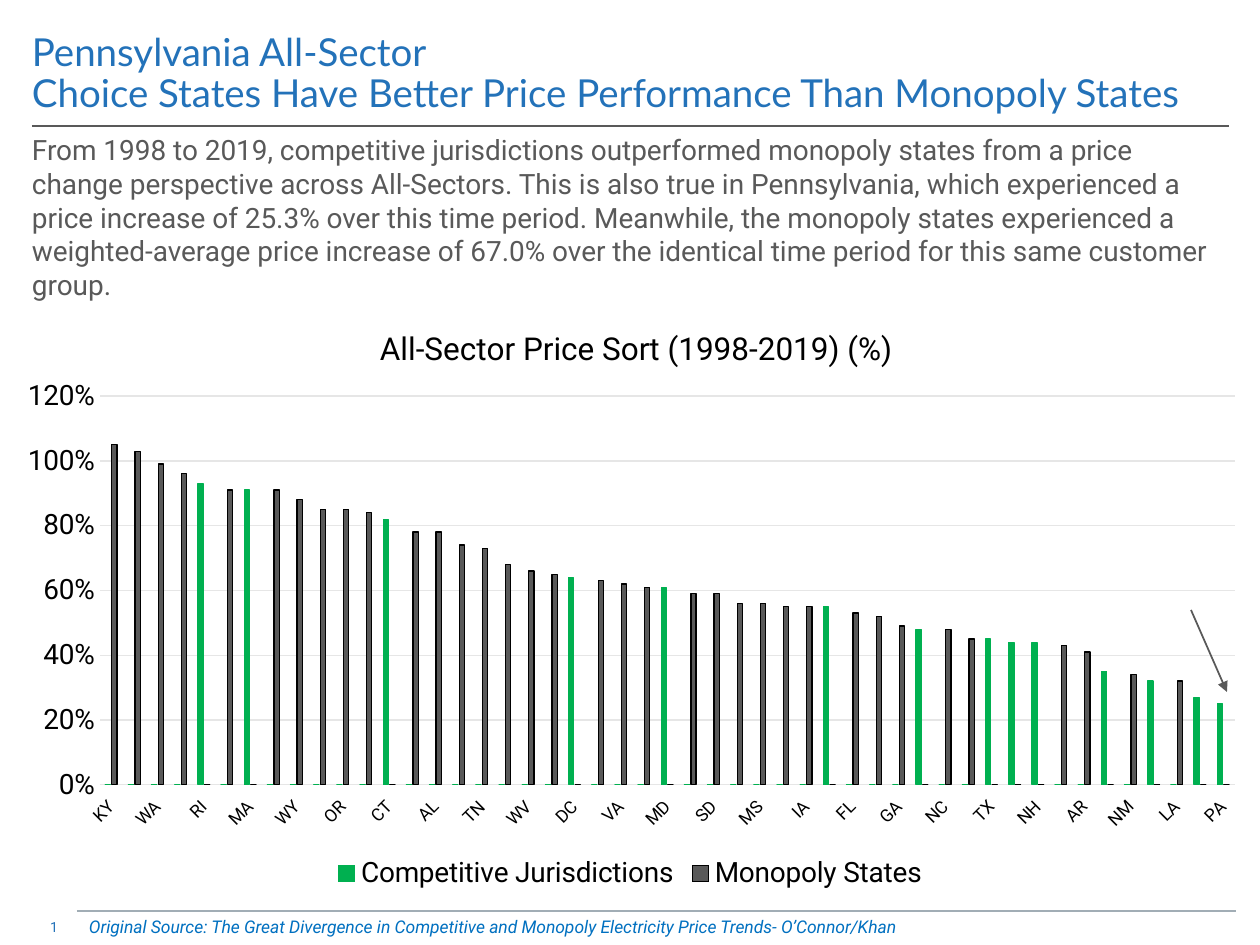
import pptx
import pptx.chart.data
import pptx.dml.color
import pptx.enum.chart
import pptx.enum.shapes
import pptx.enum.text
import pptx.oxml
import pptx.oxml.ns
import pptx.util

RGBColor = pptx.dml.color.RGBColor
BLUE = RGBColor(0x23, 0x72, 0xB9)
SOURCE_BLUE = RGBColor(0x00, 0x70, 0xC0)
GREY = RGBColor(0x59, 0x59, 0x59)
FOOTER_GREY = RGBColor(0xA1, 0xAD, 0xB5)
GRID_GREY = RGBColor(0xE6, 0xE6, 0xE6)
GREEN = RGBColor(0x00, 0xB0, 0x50)
BLACK = RGBColor(0, 0, 0)

PX = 914400 / 126
BODY_FONT = "Roboto"
TITLE_FONT = "Lato"

COMPETITIVE = set("RI MA CT DC MD DE OH TX ME NH NY NJ IL PA".split())
PRICE_CHANGE = {
    "KY": 1.05, "WI": 1.03, "WA": 0.99, "ID": 0.96, "RI": 0.93, "CA": 0.91, "MA": 0.91,
    "MT": 0.91, "WY": 0.88, "MN": 0.85, "OR": 0.85, "IN": 0.84, "CT": 0.82, "SC": 0.78,
    "AL": 0.78, "NE": 0.74, "TN": 0.73, "CO": 0.68, "WV": 0.66, "MI": 0.65, "DC": 0.64,
    "KS": 0.63, "VA": 0.62, "UT": 0.61, "MD": 0.61, "ND": 0.59, "SD": 0.59, "VT": 0.56,
    "MS": 0.56, "MO": 0.55, "IA": 0.55, "DE": 0.55, "FL": 0.53, "NV": 0.52, "GA": 0.49,
    "OH": 0.48, "NC": 0.48, "AZ": 0.45, "TX": 0.45, "ME": 0.44, "NH": 0.44, "OK": 0.43,
    "AR": 0.41, "NY": 0.35, "NM": 0.34, "NJ": 0.32, "LA": 0.32, "IL": 0.27, "PA": 0.25,
}


def emu(*lengths):
    return [pptx.util.Emu(round(length * PX)) for length in lengths]


def style_font(font, size, color=BLACK, name=BODY_FONT, italic=False):
    font.size = pptx.util.Pt(size)
    font.color.rgb = color
    font.name = name
    font.bold = False
    font.italic = italic


def style_line(line, color, width=0.75):
    line.color.rgb = color
    line.width = pptx.util.Pt(width)


def add_text(slide, box, text, *, inset=(0, 0), middle=False, spacing=None, before=None, **font):
    frame = slide.shapes.add_textbox(*emu(*box)).text_frame
    frame.word_wrap = True
    frame.margin_left, frame.margin_top = frame.margin_right, frame.margin_bottom = emu(*inset)
    anchors = pptx.enum.text.MSO_ANCHOR
    frame.vertical_anchor = anchors.MIDDLE if middle else anchors.TOP
    paragraph = frame.paragraphs[0]
    paragraph.text = text
    paragraph.line_spacing = spacing
    if before:
        paragraph.space_before = pptx.util.Pt(before)
    for run in paragraph.runs:
        style_font(run.font, **font)


def add_rule(slide, start, end, color, arrow=False):
    rule = slide.shapes.add_connector(
        pptx.enum.shapes.MSO_CONNECTOR.STRAIGHT, *emu(*start, *end))
    style_line(rule.line, color, 1)
    properties = rule.element.spPr
    if arrow:
        tail = pptx.oxml.ns.qn("a:tailEnd")
        properties.find(pptx.oxml.ns.qn("a:ln")).append(
            properties.makeelement(tail, {"type": "triangle"}))
    properties.append(properties.makeelement(pptx.oxml.ns.qn("a:effectLst"), {}))


def manual_layout(x, y, w=None, h=None):
    """Return a chart layout placed by fractions of the chart area."""
    parts = ['<c:layoutTarget val="inner"/>'] if w else []
    parts += ['<c:xMode val="edge"/>', '<c:yMode val="edge"/>']
    sizes = {"x": x, "y": y, "w": w, "h": h}
    parts += [f'<c:{key} val="{value:.3f}"/>' for key, value in sizes.items() if value]
    return pptx.oxml.parse_xml(
        f'<c:layout {pptx.oxml.ns.nsdecls("c")}><c:manualLayout>'
        f'{"".join(parts)}</c:manualLayout></c:layout>')


def place(element, layout, after=None):
    for old in element.findall(pptx.oxml.ns.qn("c:layout")):
        element.remove(old)
    if after is None:
        element.insert(0, layout)
    else:
        element.find(pptx.oxml.ns.qn(after)).addnext(layout)


def add_heading(slide, box):
    left, top, width, height = box
    add_text(slide, (left, top, width, height),
             "Pennsylvania All-Sector\n"
             "Choice States Have Better Price Performance Than Monopoly States",
             middle=True, spacing=0.9, size=22, color=BLUE, name=TITLE_FONT)
    rule_y = top + height + 1
    add_rule(slide, (left, rule_y), (left + 1197, rule_y), GREY)


def add_summary(slide, box):
    add_text(slide, box,
             "From 1998 to 2019, competitive jurisdictions outperformed monopoly states from a "
             "price change perspective across All-Sectors. This is also true in Pennsylvania, "
             "which experienced a price increase of 25.3% over this time period. Meanwhile, the "
             "monopoly states experienced a weighted-average price increase of 67.0% over the "
             "identical time period for this same customer group.",
             inset=(13, 6), size=16, color=GREY)


def add_price_chart(slide, box):
    left, top, width, height = box
    data = pptx.chart.data.CategoryChartData(number_format="0%")
    data.categories = list(PRICE_CHANGE)
    for name, competitive in (("Competitive Jurisdictions", True), ("Monopoly States", False)):
        data.add_series(name, [change if (state in COMPETITIVE) == competitive else 0
                               for state, change in PRICE_CHANGE.items()])
    enums = pptx.enum.chart
    chart = slide.shapes.add_chart(
        enums.XL_CHART_TYPE.COLUMN_CLUSTERED, *emu(*box), data).chart
    style_font(chart.font, 10)

    chart.has_title = True
    heading = chart.chart_title.text_frame.paragraphs[0]
    heading.text = "All-Sector Price Sort (1998-2019) (%)"
    style_font(heading.runs[0].font, 18)
    place(chart.chart_title._element, manual_layout(374 / width, 28 / height), after="c:tx")
    plot_area = chart._chartSpace.chart.plotArea
    place(plot_area, manual_layout(100 / width, 102 / height, 1135 / width, 389 / height))

    plot = chart.plots[0]
    plot.vary_by_categories = False
    plot.gap_width = 219
    plot.overlap = -27
    for series, fill, outline in zip(plot.series, (GREEN, GREY), (GREEN, BLACK)):
        series.format.fill.solid()
        series.format.fill.fore_color.rgb = fill
        style_line(series.format.line, outline)

    states, change = chart.category_axis, chart.value_axis
    for axis, size in ((states, 10), (change, 16)):
        axis.major_tick_mark = axis.minor_tick_mark = enums.XL_TICK_MARK.NONE
        style_font(axis.tick_labels.font, size)
    states.tick_label_position = enums.XL_TICK_LABEL_POSITION.LOW
    states._element.txPr.bodyPr.set("rot", "-2700000")
    style_line(states.format.line, GRID_GREY)
    change.minimum_scale, change.maximum_scale, change.major_unit = 0, 1.2, 0.2
    change.tick_labels.number_format = "0%"
    change.tick_labels.number_format_is_linked = False
    change.format.line.fill.background()
    style_line(change.major_gridlines.format.line, GRID_GREY)

    chart.has_legend = True
    chart.legend.position = enums.XL_LEGEND_POSITION.BOTTOM
    chart.legend.include_in_layout = False
    style_font(chart.legend.font, 16)
    add_rule(slide, (left + 1191, top + 316), (left + 1227, top + 398), GREY, arrow=True)


def add_footer(slide, box):
    left, top, width, height = box
    add_rule(slide, (left + 27, top), (left + width, top), FOOTER_GREY)
    add_text(slide, (left, top + 1, 47, 29), "1", middle=True, size=8, color=BLUE)
    add_text(slide, (left + 26, top + 1, width - 26, height - 1),
             "Original Source: The Great Divergence in Competitive and Monopoly Electricity "
             "Price Trends- O’Connor/Khan",
             inset=(13, 6), spacing=0.95, before=6, size=10, color=SOURCE_BLUE, italic=True)


def main():
    deck = pptx.Presentation()
    deck.slide_width, deck.slide_height = emu(1260, 945)
    slide = deck.slides.add_slide(deck.slide_layouts[6])
    add_footer(slide, (50, 911, 1186, 34))
    add_heading(slide, (32, 24, 1159, 101))
    add_summary(slide, (19, 127, 1208, 183))
    add_price_chart(slide, (0, 294, 1260, 601))
    deck.save("out.pptx")


if __name__ == "__main__":
    main()
